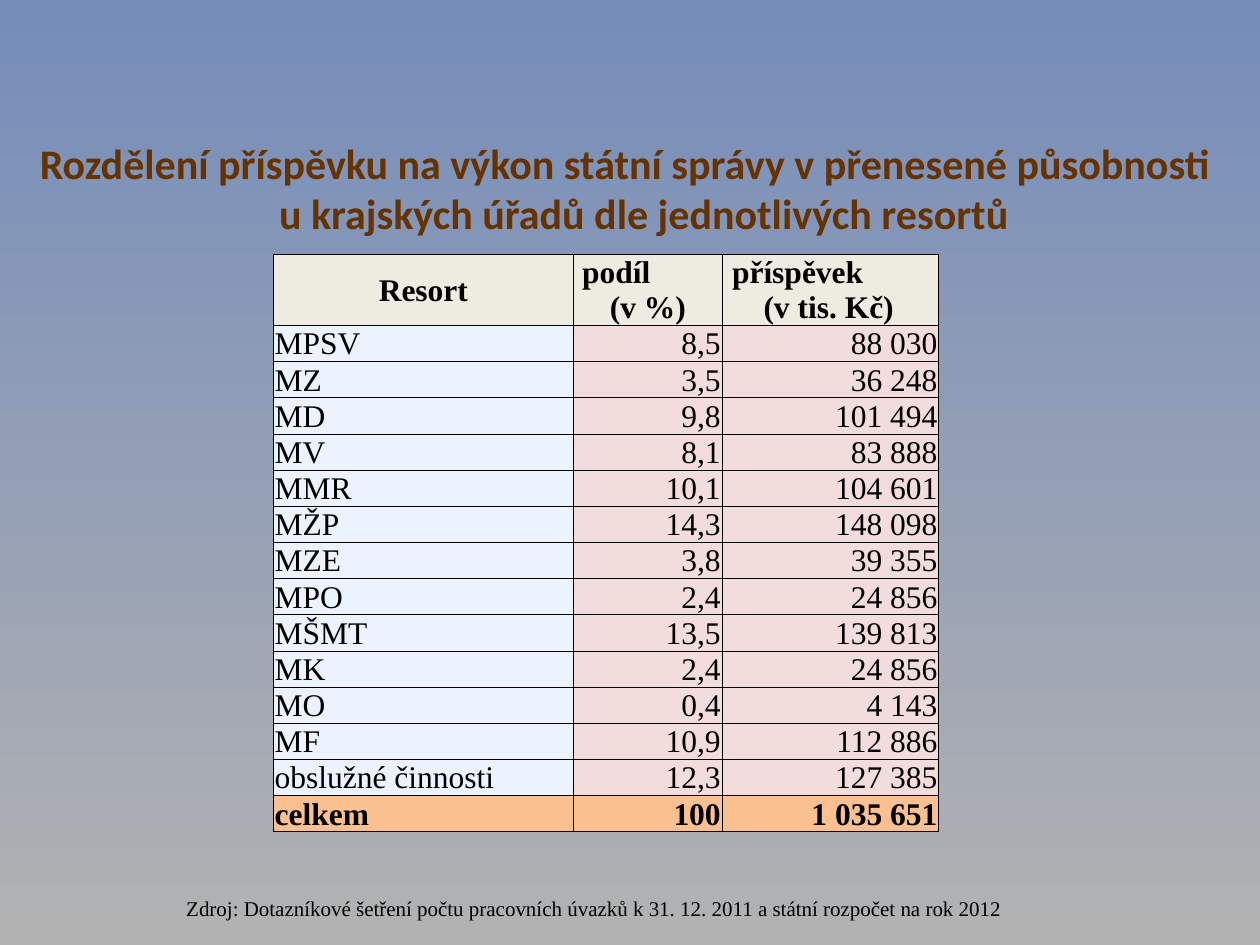
from dataclasses import dataclass

from lxml.etree import SubElement
from pptx import Presentation
from pptx.dml.color import RGBColor
from pptx.enum.text import MSO_ANCHOR as Anchor, PP_ALIGN as Align
from pptx.oxml.ns import qn
from pptx.util import Inches, Pt


@dataclass(frozen=True)
class Theme:
    gradient: tuple = ("768DBA", "B2B2B2")
    heading: str = "663300"
    ink: str = "000000"
    header_fill: str = "EEECE1"
    label_fill: str = "EBF3FF"
    value_fill: str = "F2DDDC"
    total_fill: str = "FAC090"
    sans: str = "Calibri"
    serif: str = "Times New Roman"
    title_size: int = 24
    table_size: int = 18
    source_size: int = 12
    border: float = 0.5


THEME = Theme()
TITLE = ("Rozdělení příspěvku na výkon státní správy v přenesené působnosti\v"
         "u krajských úřadů dle jednotlivých resortů")
SOURCE = ("Zdroj: Dotazníkové šetření počtu pracovních úvazků k 31. 12. 2011 "
          "a státní rozpočet na rok 2012")
COLUMN_WIDTHS = (2.38, 1.18, 1.72)
HEADER_HEIGHT, ROW_HEIGHT = 0.56, 0.28
ROWS = [
    ("Resort", "podíl\v(v %)", "příspěvek\v(v tis. Kč)"),
    ("MPSV", "8,5", "88 030"),
    ("MZ", "3,5", "36 248"),
    ("MD", "9,8", "101 494"),
    ("MV", "8,1", "83 888"),
    ("MMR", "10,1", "104 601"),
    ("MŽP", "14,3", "148 098"),
    ("MZE", "3,8", "39 355"),
    ("MPO", "2,4", "24 856"),
    ("MŠMT", "13,5", "139 813"),
    ("MK", "2,4", "24 856"),
    ("MO", "0,4", "4 143"),
    ("MF", "10,9", "112 886"),
    ("obslužné činnosti", "12,3", "127 385"),
    ("celkem", "100", "1 035 651"),
]
# Left edges of the first and second line of the two-line headers
HEADER_INDENTS = {1: (0.06, 0.28), 2: (0.07, 0.32)}


def set_background(page):
    fill = page.background.fill
    fill.gradient()
    fill.gradient_angle = 270
    for stop, color in zip(fill.gradient_stops, THEME.gradient):
        stop.color.rgb = RGBColor.from_string(color)


def write(para, text, align, color=THEME.ink, **font):
    para.text = text
    para.alignment = align
    for span in para.runs:
        for name, value in font.items():
            setattr(span.font, name, value)
        span.font.color.rgb = RGBColor.from_string(color)


def hang(para, first, rest):
    """Start the first line and the lines after it at different left edges."""
    properties = para._p.get_or_add_pPr()
    properties.set("marL", str(Inches(rest)))
    properties.set("indent", str(Inches(first) - Inches(rest)))


def add_text(page, place, text, align, **font):
    box = page.shapes.add_textbox(*map(Inches, place))
    box.text_frame.word_wrap = True
    write(box.text_frame.paragraphs[0], text, align, **font)
    return box.text_frame


def add_borders(cell):
    properties = cell._tc.get_or_add_tcPr()
    for side in "LRTB":
        line = SubElement(properties, qn(f"a:ln{side}"), w=str(Pt(THEME.border)))
        fill = SubElement(line, qn("a:solidFill"))
        SubElement(fill, qn("a:srgbClr"), val=THEME.ink)


def cell_style(row, column):
    """Give the fill, alignment and boldness that belong to a table position."""
    if row == 0:
        return THEME.header_fill, Align.LEFT if column else Align.CENTER, True
    align = Align.RIGHT if column else Align.LEFT
    if row == len(ROWS) - 1:
        return THEME.total_fill, align, True
    return THEME.value_fill if column else THEME.label_fill, align, False


def fill_cell(cell, text, row, column):
    color, align, bold = cell_style(row, column)
    layout = {
        "margin_left": Inches(0.01),
        "margin_right": Inches(0.01),
        "margin_top": Inches(0.01),
        "margin_bottom": 0,
        "vertical_anchor": Anchor.BOTTOM if row else Anchor.MIDDLE,
    }
    for name, value in layout.items():
        setattr(cell, name, value)
    add_borders(cell)
    cell.fill.solid()
    cell.fill.fore_color.rgb = RGBColor.from_string(color)
    para = cell.text_frame.paragraphs[0]
    write(para, text, align, name=THEME.serif, size=Pt(THEME.table_size), bold=bold)
    if row == 0 and column in HEADER_INDENTS:
        hang(para, *HEADER_INDENTS[column])


def add_contribution_table(page):
    heights = [HEADER_HEIGHT] + [ROW_HEIGHT] * (len(ROWS) - 1)
    place = (2.17, 2.02, sum(COLUMN_WIDTHS), sum(heights))
    table = page.shapes.add_table(
        len(ROWS), len(COLUMN_WIDTHS), *map(Inches, place)).table
    for column, width in zip(table.columns, COLUMN_WIDTHS):
        column.width = Inches(width)
    for row, height in zip(table.rows, heights):
        row.height = Inches(height)
    for row, texts in enumerate(ROWS):
        for column, text in enumerate(texts):
            fill_cell(table.cell(row, column), text, row, column)


def add_title(page):
    frame = add_text(page, (0.2, 1.04, 9.69, 0.91), TITLE, Align.CENTER,
                     color=THEME.heading, name=THEME.sans,
                     size=Pt(THEME.title_size), bold=True)
    frame.margin_left, frame.margin_right = 0, Inches(0.17)
    hang(frame.paragraphs[0], 0, 0.3)


def main():
    deck = Presentation()
    deck.slide_width, deck.slide_height = Inches(10), Inches(7.5)
    page = deck.slides.add_slide(deck.slide_layouts[6])
    set_background(page)
    add_contribution_table(page)
    add_title(page)
    add_text(page, (1.38, 7.06, 6.93, 0.3), SOURCE, Align.LEFT,
             name=THEME.serif, size=Pt(THEME.source_size))
    deck.save("out.pptx")


if __name__ == "__main__":
    main()
